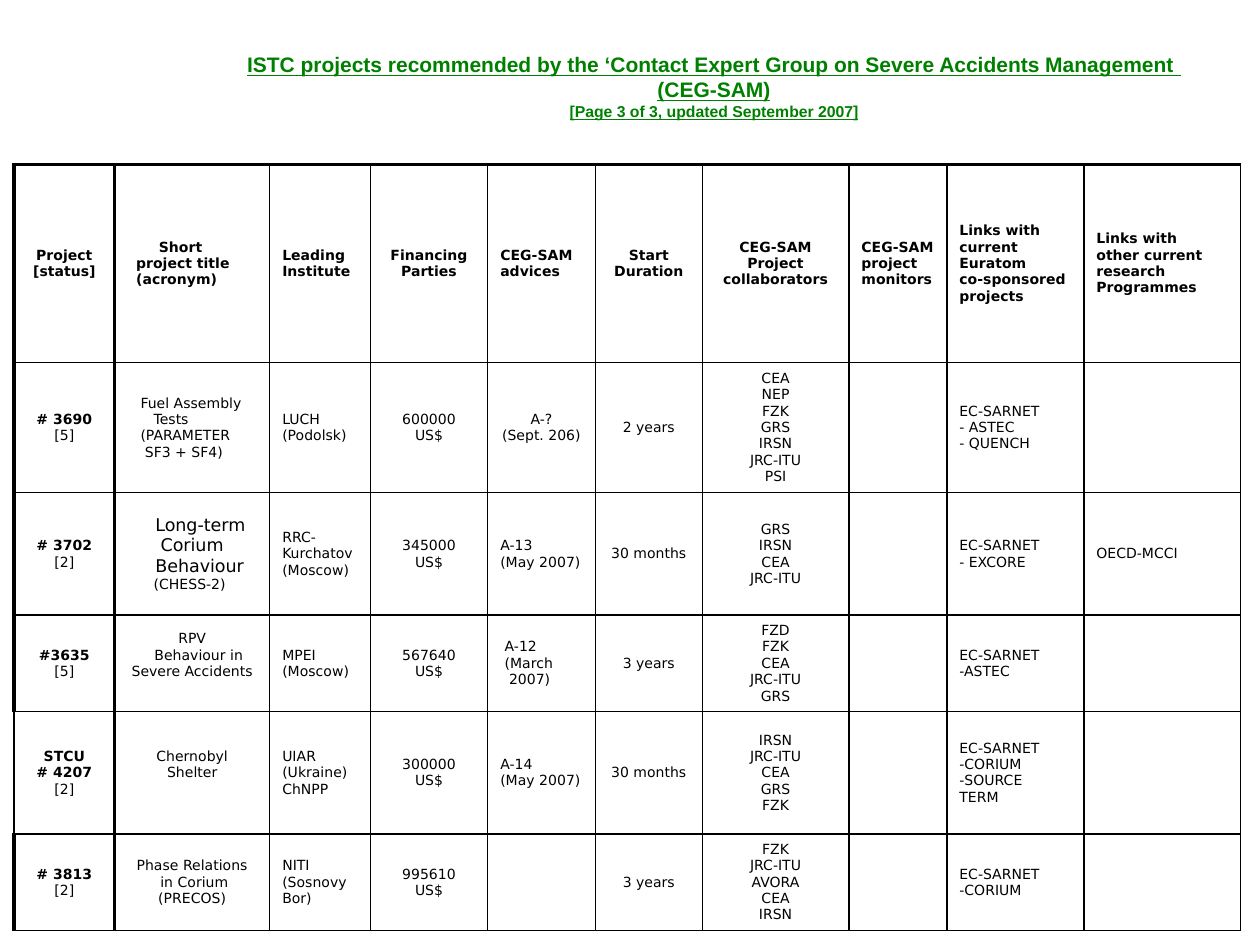
from dataclasses import dataclass
from lxml.etree import SubElement
from pptx import Presentation
from pptx.dml.color import RGBColor
from pptx.enum.text import MSO_ANCHOR, MSO_AUTO_SIZE, PP_ALIGN
from pptx.oxml.ns import qn
from pptx.util import Pt


@dataclass(frozen=True)
class Theme:
    ink: str = "000000"
    paper: str = "FFFFFF"
    green: str = "008000"
    head_font: str = "Arial"
    cell_font: str = "DejaVu Sans"
    head: float = 12
    note: float = 9
    cell: float = 8
    large: float = 10
    thin: float = 1
    thick: float = 2


# Table text: "|" parts the lines of a cell
ROWS = [
    ["Project|[status]", "Short|project title|(acronym)", "Leading|Institute",
     "Financing|Parties", "CEG-SAM|advices", "Start|Duration",
     "CEG-SAM|Project|collaborators", "CEG-SAM|project|monitors",
     "Links with|current|Euratom|co-sponsored|projects",
     "Links with|other current|research|Programmes"],
    ["# 3690|[5]", "Fuel Assembly|Tests|(PARAMETER|SF3 + SF4)", "LUCH|(Podolsk)",
     "600000|US$", "A-?|(Sept. 206)", "2 years",
     "CEA|NEP|FZK|GRS|IRSN|JRC-ITU|PSI", "", "EC-SARNET|- ASTEC|- QUENCH", ""],
    ["# 3702|[2]", "Long-term|Corium|Behaviour|(CHESS-2)", "RRC-|Kurchatov|(Moscow)",
     "345000|US$", "A-13|(May 2007)", "30 months",
     "GRS|IRSN|CEA|JRC-ITU", "", "EC-SARNET|- EXCORE", "OECD-MCCI"],
    ["#3635|[5]", "RPV|Behaviour in|Severe Accidents", "MPEI|(Moscow)",
     "567640|US$", "A-12|(March|2007)", "3 years",
     "FZD|FZK|CEA|JRC-ITU|GRS", "", "EC-SARNET|-ASTEC", ""],
    ["STCU|# 4207|[2]", "Chernobyl|Shelter", "UIAR|(Ukraine)|ChNPP",
     "300000|US$", "A-14|(May 2007)", "30 months",
     "IRSN|JRC-ITU|CEA|GRS|FZK", "", "EC-SARNET|-CORIUM|-SOURCE|TERM", ""],
    ["# 3813|[2]", "Phase Relations|in Corium|(PRECOS)", "NITI|(Sosnovy|Bor)",
     "995610|US$", "", "3 years",
     "FZK|JRC-ITU|AVORA|CEA|IRSN", "", "EC-SARNET|-CORIUM", ""],
]
WIDTHS = [57.6, 88.5, 57.6, 67, 61.5, 61.2, 83.7, 56, 78.3, 89.5]
HEIGHTS = [113.3, 61.2, 70, 38.2, 70, 43.2]

# Left indents by (row, column), one per line
SHIFTS = {
    (0, 1): [18, 5, 5],
    (1, 1): [7.5, 15, 7.5, 10],
    (2, 1): [16, 19, 16, 15],
    (3, 1): [0, 7.5, 0],
    (3, 4): [2.5, 2.5, 5],
    (5, 1): [0, 2.5, 0],
}
RAISED = {(3, 1), (4, 1)}  # cells whose text sits half a line higher
LARGE = {(2, 1, 0), (2, 1, 1), (2, 1, 2)}  # row, column, line


def centred(row, col):
    return col in (0, 3, 5, 6) or (row, col) == (1, 4) or (col == 1 and row > 2)


class Deck:
    def __init__(self, theme):
        self.theme = theme
        self.show = Presentation()
        self.show.slide_width, self.show.slide_height = Pt(720), Pt(540)
        self.slide = self.show.slides.add_slide(self.show.slide_layouts[5])

    def style(self, font, color, **form):
        for name, value in form.items():
            setattr(font, name, value)
        font.color.rgb = RGBColor.from_string(color)

    def title(self, lines, box):
        shape = self.slide.shapes.title
        for name, value in zip(("left", "top", "width", "height"), box):
            setattr(shape, name, Pt(value))
        frame = shape.text_frame
        frame.word_wrap = True
        frame.auto_size = MSO_AUTO_SIZE.SHAPE_TO_FIT_TEXT
        frame.vertical_anchor = MSO_ANCHOR.TOP
        para = frame.paragraphs[0]
        para.alignment = PP_ALIGN.CENTER
        for i, (text, size) in enumerate(lines):
            if i:
                para.add_line_break()
            run = para.add_run()
            run.text = text
            self.style(run.font, self.theme.green, name=self.theme.head_font,
                       size=Pt(size), bold=True, underline=True)

    def edges(self, cell, row, col):
        thin, thick = self.theme.thin, self.theme.thick
        sides = {
            "L": thick if col == 1 or (col == 0 and row != 4) else thin,
            "R": thick if col == 0 else thin,
            "T": thick if row == 0 else thin,
            "B": thin,
        }
        props = cell._tc.get_or_add_tcPr()
        for side, width in sides.items():
            line = SubElement(props, qn(f"a:ln{side}"), w=str(Pt(width)))
            fill = SubElement(line, qn("a:solidFill"))
            SubElement(fill, qn("a:srgbClr"), val=self.theme.ink)

    def cell(self, cell, row, col, text):
        cell.vertical_anchor = MSO_ANCHOR.MIDDLE
        self.edges(cell, row, col)
        if row == 0:
            cell.fill.solid()
            cell.fill.fore_color.rgb = RGBColor.from_string(self.theme.paper)
        else:
            cell.fill.background()
        if (row, col) in RAISED:
            cell.margin_bottom = Pt(13)
        if not text:
            return
        lines = text.split("|")
        shifts = SHIFTS.get((row, col), [0] * len(lines))
        frame = cell.text_frame
        for i, (line, shift) in enumerate(zip(lines, shifts)):
            para = frame.add_paragraph() if i else frame.paragraphs[0]
            para.alignment = PP_ALIGN.CENTER if centred(row, col) else PP_ALIGN.LEFT
            if shift:
                para._p.get_or_add_pPr().set("marL", str(Pt(shift)))
            run = para.add_run()
            run.text = line
            size = self.theme.large if (row, col, i) in LARGE else self.theme.cell
            bold = row == 0 or (col == 0 and i < len(lines) - 1)
            self.style(run.font, self.theme.ink, name=self.theme.cell_font,
                       size=Pt(size), bold=bold)

    def table(self, rows, widths, heights, left, top):
        shape = self.slide.shapes.add_table(
            len(rows), len(widths), Pt(left), Pt(top), Pt(sum(widths)), Pt(sum(heights)))
        grid = shape.table
        grid.first_row = grid.horz_banding = False
        for part, width in zip(grid.columns, widths):
            part.width = Pt(width)
        for part, height in zip(grid.rows, heights):
            part.height = Pt(height)
        for r, row in enumerate(rows):
            for c, text in enumerate(row):
                self.cell(grid.cell(r, c), r, c, text)


def main():
    theme = Theme()
    deck = Deck(theme)
    # Heading
    deck.title([
        ("ISTC projects recommended by the ‘Contact Expert Group on Severe "
         "Accidents Management ", theme.head),
        ("(CEG-SAM)", theme.head),
        ("[Page 3 of 3, updated September 2007]", theme.note),
    ], (108, 26, 600, 47))
    # Project table
    deck.table(ROWS, WIDTHS, HEIGHTS, 8, 94)
    deck.show.save("out.pptx")


if __name__ == "__main__":
    main()
